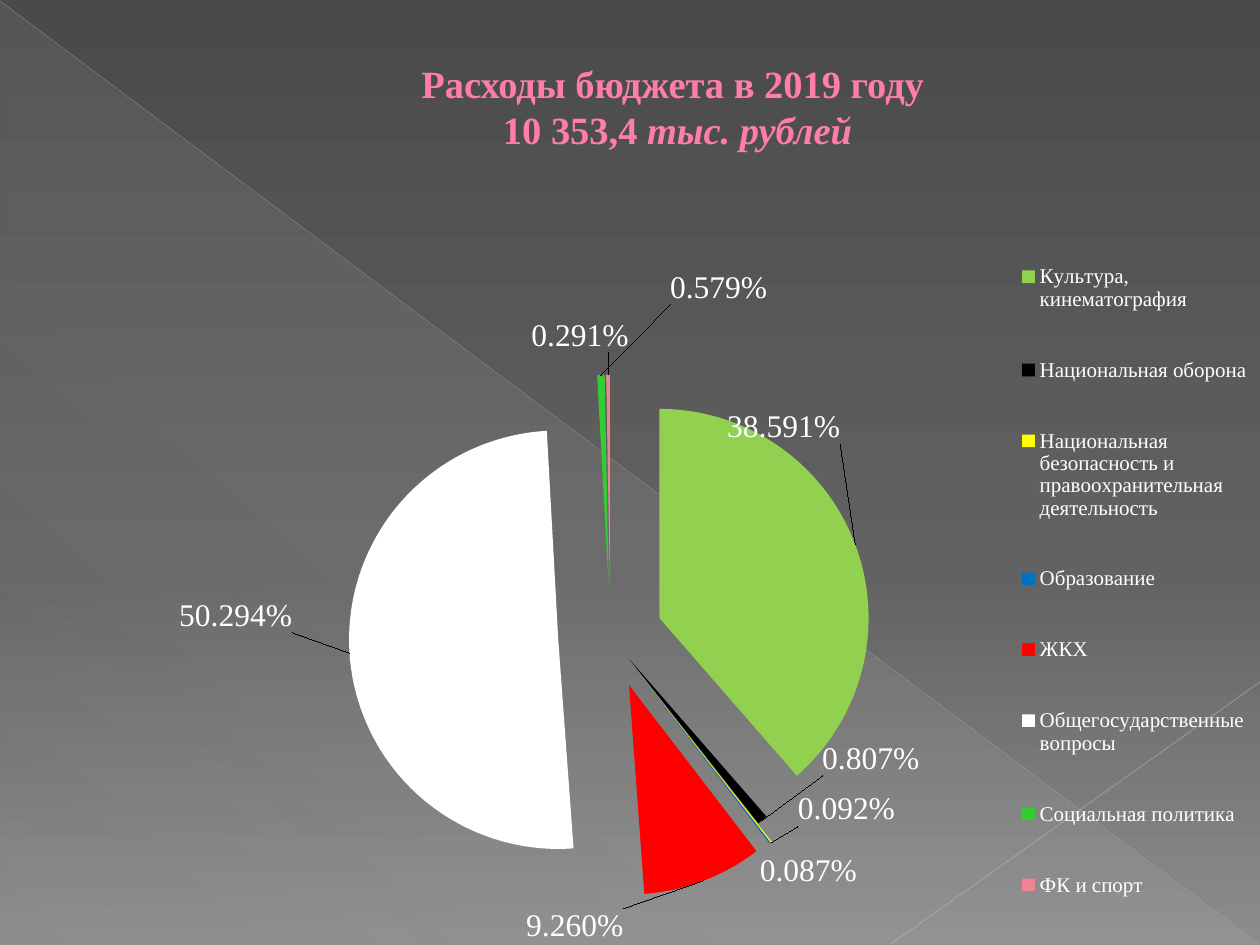
import pptx
import pptx.chart.data
import pptx.dml.color
import pptx.enum.chart
import pptx.enum.shapes
import pptx.enum.text
import pptx.oxml
import pptx.oxml.ns
import pptx.util

SERIF = "Times New Roman"
CHART_WIDTH, CHART_HEIGHT = 1225, 728
COLORS = {
    "title": "FF7DA7", "text": "FFFFFF", "ray": "D2D2D2",
    "diagonal": "BFBFBF", "corner": "C6C6C6",
    "top": "4A4A4A", "middle": "626262", "bottom": "8C8C8C",
    "culture": "92D050", "defence": "000000", "security": "FFFF00",
    "education": "0070C0", "housing": "FF0000", "general": "FFFFFF",
    "social": "33CC33", "sport": "EE8492",
}
EXPENSES = [
    ("Культура, кинематография", 38.591, "culture", (-135, -98), "Percent"),
    ("Национальная оборона", 0.807, "defence", (55, -84), "Percent"),
    ("Национальная безопасность и правоохранительная деятельность",
     0.092, "security", (22, -56), "Percent"),
    ("Образование", 0.087, "education", (-15, 5), "Percent"),
    ("ЖКХ", 9.26, "housing", (-180, 21), "Percent"),
    ("Общегосударственные вопросы", 50.294, "general", (-50, -38), "Val"),
    ("Социальная политика", 0.579, "social", (118, -63), "Percent"),
    ("ФК и спорт", 0.291, "sport", (-28, -15), "Percent"),
]


def px(count):
    """Turn slide pixels into EMU."""
    return pptx.util.Emu(round(count * 914400 / 126))


def rgb(name):
    """Look up a named colour."""
    return pptx.dml.color.RGBColor.from_string(COLORS[name])


def element(tag, body="", **attributes):
    """Build an XML element of the drawing or chart namespace."""
    listed = "".join(f' {key}="{value}"' for key, value in attributes.items())
    spaces = pptx.oxml.ns.nsdecls("a", "c")
    return pptx.oxml.parse_xml(f"<{tag} {spaces}{listed}>{body}</{tag}>")


def set_gradient(fill, owner, angle, stops):
    """Fill with a linear gradient of (percent, colour, opacity) stops."""
    fill.gradient()
    fill.gradient_angle = angle
    stop_list = owner.xpath(".//a:gsLst")[0]
    for old in list(stop_list):
        stop_list.remove(old)
    for place, name, opacity in stops:
        color = (f'<a:srgbClr val="{COLORS[name]}">'
                 f'<a:alpha val="{opacity * 1000}"/></a:srgbClr>')
        stop_list.append(element("a:gs", color, pos=place * 1000))


def add_ray(page, start, end, name, width, opacity):
    """Draw a thin translucent line."""
    line = page.shapes.add_connector(
        pptx.enum.shapes.MSO_CONNECTOR.STRAIGHT,
        *[px(count) for count in start + end])
    line.line.width = pptx.util.Pt(width)
    line.line.color.rgb = rgb(name)
    color = line.element.xpath(".//a:ln//a:srgbClr")[0]
    color.append(element("a:alpha", val=opacity * 1000))
    line.element.spPr.append(element("a:effectLst"))


def add_backdrop(page):
    """Draw the grey background, its light triangle and rays."""
    set_gradient(page.background.fill, page.element, 270,
                 [(0, "top", 100), (60, "middle", 100), (100, "bottom", 100)])
    triangle = page.shapes.add_shape(
        pptx.enum.shapes.MSO_SHAPE.RIGHT_TRIANGLE,
        px(1), px(2), px(1258), px(943))
    triangle.shadow.inherit = False
    triangle.line.fill.background()
    set_gradient(triangle.fill, triangle.element, 227,
                 [(0, "ray", 10), (70, "ray", 8), (100, "ray", 1)])
    add_ray(page, (0, 1), (1259, 944), "diagonal", 0.39, 35)
    add_ray(page, (1260, 682), (891, 944), "corner", 0.47, 45)


def add_title(page):
    """Fill and place the title."""
    title = page.shapes.title
    title.left, title.top = px(63), px(45)
    title.width, title.height = px(1162), px(123)
    frame = title.text_frame
    frame.word_wrap = True
    frame.auto_size = pptx.enum.text.MSO_AUTO_SIZE.NONE
    frame.vertical_anchor = pptx.enum.text.MSO_ANCHOR.MIDDLE
    para = frame.paragraphs[0]
    para.alignment = pptx.enum.text.PP_ALIGN.CENTER
    para.line_spacing = 1.0
    properties = para._p.get_or_add_pPr()
    properties.set("marL", str(px(67)))
    properties.set("indent", "0")
    para.add_run().text = "Расходы бюджета в 2019 году "
    para.add_line_break()
    para.add_run().text = "10 353,4 "
    unit = para.add_run()
    unit.text = "тыс. рублей"
    unit.font.italic = True
    for span in para.runs:
        span.font.name = SERIF
        span.font.size = pptx.util.Pt(22)
        span.font.bold = True
        span.font.color.rgb = rgb("title")
    page.shapes._spTree.append(title.element)


def set_font(font, size):
    """Give chart text its serif face, size and white colour."""
    font.name = SERIF
    font.size = pptx.util.Pt(size)
    font.color.rgb = rgb("text")


def layout(x, y, size=None):
    """Build a manual chart layout from lengths in pixels."""
    parts = []
    if size:
        parts += [("xMode", "edge"), ("yMode", "edge")]
    parts += [("x", x / CHART_WIDTH), ("y", y / CHART_HEIGHT)]
    if size:
        parts += [("w", size[0] / CHART_WIDTH), ("h", size[1] / CHART_HEIGHT)]
    body = "".join(f'<c:{tag} val="{value}"/>' for tag, value in parts)
    return element("c:layout", f"<c:manualLayout>{body}</c:manualLayout>")


def point_label(index, shift, shown):
    """Build a label of one kind moved away from its usual place."""
    flags = ("LegendKey", "Val", "CatName", "SerName", "Percent", "BubbleSize")
    body = "".join(f'<c:show{flag} val="{int(flag == shown)}"/>'
                   for flag in flags)
    label = element(
        "c:dLbl", f'<c:idx val="{index}"/><c:dLblPos val="bestFit"/>{body}')
    label.insert(1, layout(*shift))
    if shown == "Val":
        label.insert(2, element("c:numFmt", formatCode="0.000&quot;%&quot;",
                                sourceLinked=0))
    return label


def add_pie(page):
    """Add the exploded pie of expenses with its legend."""
    data = pptx.chart.data.CategoryChartData()
    data.categories = [row[0] for row in EXPENSES]
    data.add_series("Series 1", [row[1] for row in EXPENSES])
    chart = page.shapes.add_chart(
        pptx.enum.chart.XL_CHART_TYPE.PIE,
        px(35), px(217), px(CHART_WIDTH), px(CHART_HEIGHT), data).chart
    chart.has_title = False
    set_font(chart.font, 18)
    chart.has_legend = True
    chart.legend.position = pptx.enum.chart.XL_LEGEND_POSITION.RIGHT
    chart.legend.include_layout = False
    set_font(chart.legend.font, 12)

    plot = chart.plots[0]
    plot.vary_by_categories = True
    series = plot.series[0]
    labels = series.data_labels
    labels.show_value = False
    labels.show_percentage = True
    labels.number_format = "0.000%"
    labels.number_format_is_linked = False
    set_font(labels.font, 18)
    root = chart._chartSpace
    label_list = root.xpath(".//c:ser/c:dLbls")[0]
    for index, (_, _, name, shift, shown) in enumerate(EXPENSES):
        fill = series.points[index].format.fill
        fill.solid()
        fill.fore_color.rgb = rgb(name)
        label_list.insert(index, point_label(index, shift, shown))

    points = root.xpath(".//c:ser/c:dPt")
    points[0].addprevious(element("c:explosion", val=25))
    points[1].xpath("./c:spPr")[0].addprevious(
        element("c:explosion", val=14))
    for old in root.xpath(".//c:plotArea/c:layout | .//c:legend/c:layout"):
        old.getparent().remove(old)
    area = layout(59, 158, (1033, 523))
    area[0].insert(0, element("c:layoutTarget", val="inner"))
    root.xpath(".//c:plotArea")[0].insert(0, area)
    root.xpath(".//c:legendPos")[0].addnext(layout(977, 0, (245, 728)))


def main():
    """Build the budget slide and save it."""
    deck = pptx.Presentation()
    deck.slide_width, deck.slide_height = px(1260), px(945)
    page = deck.slides.add_slide(deck.slide_layouts[5])
    add_backdrop(page)
    add_title(page)
    add_pie(page)
    deck.save("out.pptx")


if __name__ == "__main__":
    main()
